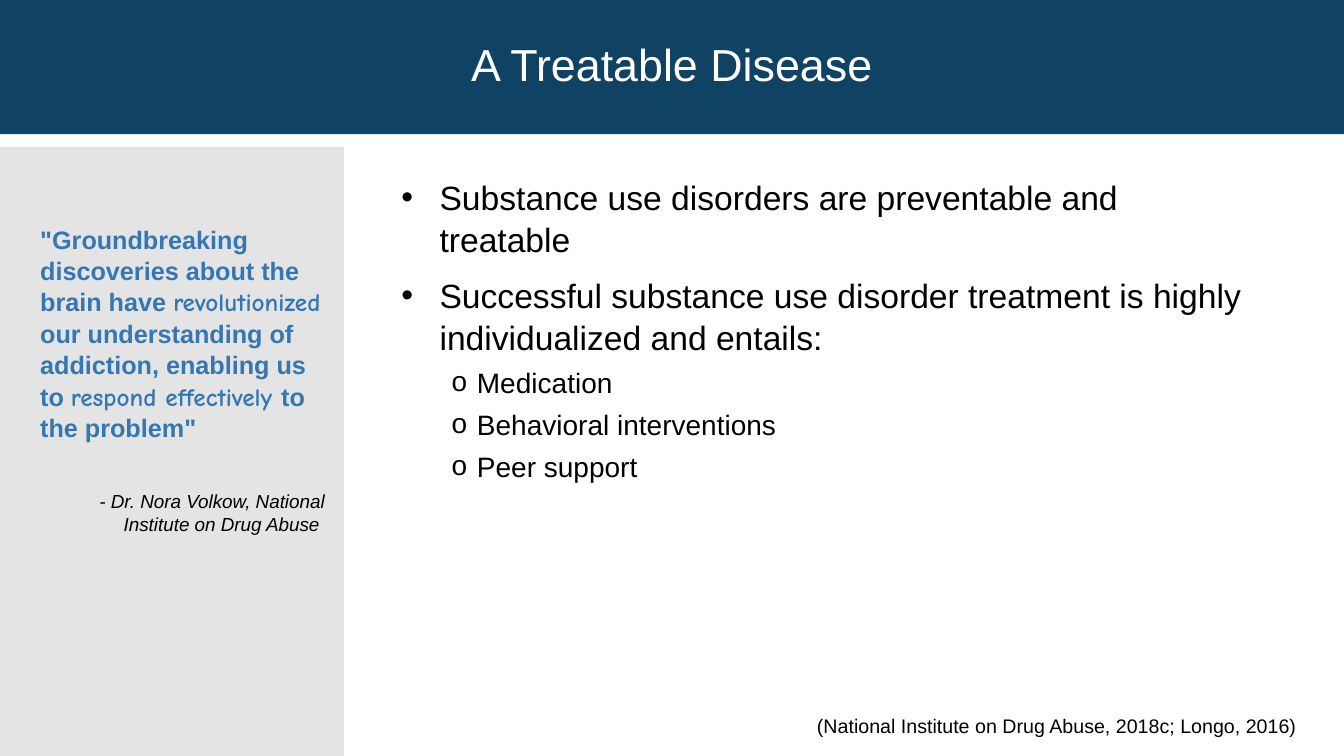
from lxml import etree
from pptx import Presentation
from pptx.dml.color import RGBColor
from pptx.enum.shapes import MSO_SHAPE as Shape
from pptx.enum.text import MSO_ANCHOR as Anchor, MSO_AUTO_SIZE as AutoSize, PP_ALIGN as Align
from pptx.oxml.ns import qn
from pptx.util import Inches, Pt

NAVY = RGBColor(0x0F, 0x42, 0x63)
BLUE = RGBColor(0x34, 0x77, 0xB2)
GRAY = RGBColor(0xDB, 0xDB, 0xDB)
BLACK = RGBColor(0, 0, 0)
WHITE = RGBColor(255, 255, 255)
SANS, HAND = "Arial", "Comic Neue"
LINE_SPACING = 1.04

# Per level: bullet, left margin (in), hanging indent (in), space before, size
LEVELS = [("•", 0.38, 0.38, 10, 24), ("o", 0.75, 0.25, 5, 20)]

POINTS = [
    (0, "Substance use disorders are preventable and treatable"),
    (0, "Successful substance use disorder treatment is highly individualized and entails:"),
    (1, "Medication"),
    (1, "Behavioral interventions"),
    (1, "Peer support"),
]
QUOTE = [
    ('"Groundbreaking discoveries about the brain have ', SANS),
    ("revolutionized", HAND),
    (" our understanding of addiction, enabling us to ", SANS),
    ("respond effectively ", HAND),
    ('to the problem"', SANS),
]


def place(shape, left, top, width, height):
    shape.left, shape.top = Inches(left), Inches(top)
    shape.width, shape.height = Inches(width), Inches(height)


def style(paragraph, size, color, name=SANS):
    font = paragraph.font
    font.size, font.name, font.color.rgb = Pt(size), name, color


def set_bullet(paragraph, character, margin, hanging):
    properties = paragraph._p.get_or_add_pPr()
    properties.set("marL", str(Inches(margin)))
    properties.set("indent", str(-Inches(hanging)))
    etree.SubElement(properties, qn("a:buFont"), typeface=SANS)
    etree.SubElement(properties, qn("a:buChar"), char=character)


def add_text(slide, left, top, width, height):
    """Add a wrapping text box and return its first paragraph."""
    box = slide.shapes.add_textbox(*map(Inches, (left, top, width, height)))
    box.text_frame.word_wrap = True
    box.text_frame.auto_size = AutoSize.SHAPE_TO_FIT_TEXT
    return box.text_frame.paragraphs[0]


def fill_title(title, left, top, width, height):
    place(title, left, top, width, height)
    title.fill.solid()
    title.fill.fore_color.rgb = NAVY
    title.text_frame.vertical_anchor = Anchor.MIDDLE
    title.text_frame.text = "A Treatable Disease"
    paragraph = title.text_frame.paragraphs[0]
    paragraph.alignment = Align.CENTER
    paragraph.line_spacing = 0.9
    style(paragraph, 32, WHITE)


def fill_body(body, left, top, width, height):
    place(body, left, top, width, height)
    frame = body.text_frame
    frame.text = "\n".join(text for _, text in POINTS)
    for paragraph, (level, _) in zip(frame.paragraphs, POINTS):
        character, margin, hanging, before, size = LEVELS[level]
        paragraph.level = level
        paragraph.line_spacing = LINE_SPACING
        paragraph.space_before = Pt(before)
        set_bullet(paragraph, character, margin, hanging)
        style(paragraph, size, BLACK)


def add_quote_panel(slide, left, top, width, height):
    panel = slide.shapes.add_shape(Shape.RECTANGLE, *map(Inches, (left, top, width, height)))
    panel.shadow.inherit = False
    panel.line.fill.background()
    panel.fill.solid()
    panel.fill.fore_color.rgb = GRAY
    color = panel.fill._xPr.find(f".//{qn('a:srgbClr')}")
    etree.SubElement(color, qn("a:alpha"), val="74000")

    author = add_text(slide, left + 0.74, top + 3.35, 2.58, 0.56)
    author.text = "- Dr. Nora Volkow, National Institute on Drug Abuse\u00a0"
    author.alignment = Align.RIGHT
    style(author, 13.5, BLACK)
    author.font.italic = True

    quote = add_text(slide, left + 0.3, top + 0.7, 3.01, 2.52)
    quote.line_spacing = LINE_SPACING
    style(quote, 18, BLUE)
    quote.font.bold = True
    for text, name in QUOTE:
        run = quote.add_run()
        run.text = text
        run.font.name = name


def add_citation(slide, left, top, width, height):
    citation = add_text(slide, left, top, width, height)
    citation.text = "(National Institute on Drug Abuse, 2018c; Longo, 2016)"
    citation.alignment = Align.RIGHT
    style(citation, 14, BLACK)


def main():
    presentation = Presentation()
    presentation.slide_width, presentation.slide_height = Inches(13.33), Inches(7.5)
    slide = presentation.slides.add_slide(presentation.slide_layouts[1])
    fill_title(slide.shapes.title, 0, 0, 13.33, 1.33)
    fill_body(slide.placeholders[1], 3.88, 1.69, 8.62, 4.76)
    add_quote_panel(slide, 0, 1.46, 3.41, 6.06)
    add_citation(slide, 7.6, 7.03, 5.36, 0.34)
    presentation.save("out.pptx")


if __name__ == "__main__":
    main()
